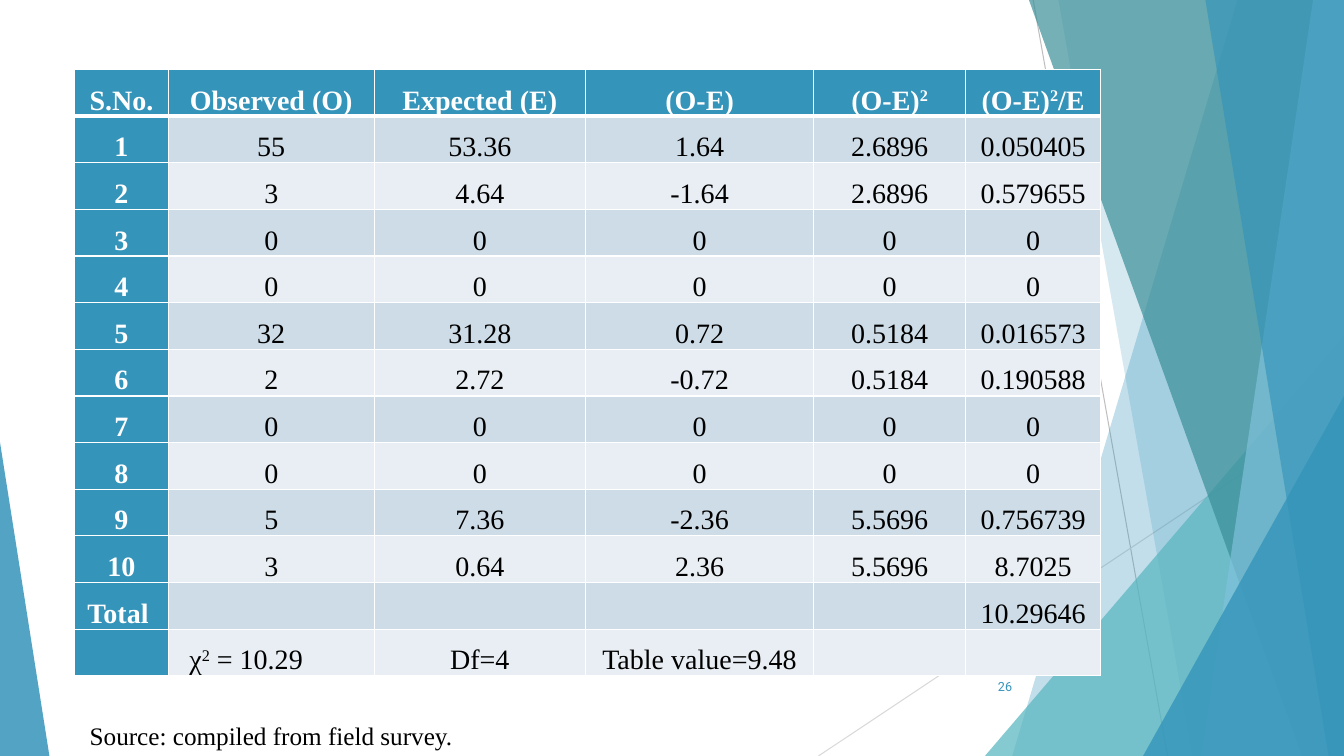
from lxml import etree
from pptx import Presentation
from pptx import util as u
from pptx.dml.color import RGBColor
from pptx.enum import shapes, text
from pptx.oxml.ns import qn

Pt = u.Pt
TEAL = "3494BA"
SERIF = "Times New Roman"


def rgb(color):
    return RGBColor.from_string(color)


def paint(shape, color, opacity):
    """Fill a shape with a translucent colour, without outline or shadow."""
    shape.shadow.inherit = False
    shape.line.fill.background()
    shape.fill.solid()
    shape.fill.fore_color.rgb = rgb(color)
    swatch = next(shape.element.spPr.iter(qn("a:srgbClr")))
    etree.SubElement(swatch, qn("a:alpha"), val=str(opacity * 1000))


deck = Presentation()
deck.slide_width, deck.slide_height = Pt(960), Pt(540)
slide = deck.slides.add_slide(deck.slide_layouts[6])

# Background: two hairlines
for x1, y1, x2, y2, color in [
    (738, 0, 834, 540, "BFBFBF"),
    (960, 290, 584.6, 540, "D9D9D9"),
]:
    hairline = slide.shapes.add_connector(
        shapes.MSO_CONNECTOR.STRAIGHT, Pt(x1), Pt(y1), Pt(x2), Pt(y2))
    hairline.line.color.rgb = rgb(color)
    hairline.line.width = Pt(0.75)
    etree.SubElement(hairline.element.spPr, qn("a:effectLst"))

# Background: facets, from back to front. A band runs to the right edge of the
# slide from (top x, bottom x); a triangle has (left, top, width, height, apex).
facets = [
    ((884, 723), TEAL, 30),
    ((756, 852), TEAL, 20),
    ((703.5, 240, 256.5, 300, 1), "58B6C0", 72),
    ((735, 929.5), "3A8F98", 70),
    ((938, 858), "7FC1DB", 70),
    ((861, 949), TEAL, 65),
    ((816.5, 283, 143.5, 257, 1), TEAL, 80),
    ((0, 316, 35.3, 224, 0), TEAL, 85),
]
for outline, color, opacity in facets:
    if len(outline) == 2:
        top_x, bottom_x = outline
        builder = slide.shapes.build_freeform(top_x, 0, scale=Pt(1))
        builder.add_line_segments([(960, 0), (960, 540), (bottom_x, 540)], close=True)
        facet = builder.convert_to_shape()
    else:
        *box, apex = outline
        facet = slide.shapes.add_shape(
            shapes.MSO_SHAPE.ISOSCELES_TRIANGLE, *[Pt(n) for n in box])
        facet.adjustments[0] = apex
    paint(facet, color, opacity)

# Chi-square table
results = [
    ["S.No.", "Observed (O)", "Expected (E)", "(O-E)", "(O-E)²", "(O-E)²/E"],
    ["1", "55", "53.36", "1.64", "2.6896", "0.050405"],
    ["2", "3", "4.64", "-1.64", "2.6896", "0.579655"],
    ["3", "0", "0", "0", "0", "0"],
    ["4", "0", "0", "0", "0", "0"],
    ["5", "32", "31.28", "0.72", "0.5184", "0.016573"],
    ["6", "2", "2.72", "-0.72", "0.5184", "0.190588"],
    ["7", "0", "0", "0", "0", "0"],
    ["8", "0", "0", "0", "0", "0"],
    ["9", "5", "7.36", "-2.36", "5.5696", "0.756739"],
    ["10", "3", "0.64", "2.36", "5.5696", "8.7025"],
    ["Total", "", "", "", "", "10.29646"],
    ["", "χ² = 10.29", "Df=4", "Table value=9.48", "", ""],
]
column_widths = [67, 147, 151, 163, 108.5, 96.5]
row_height = 27.4
right_margins = {(11, 0): 10, (12, 1): 41}

table = slide.shapes.add_table(
    len(results), len(column_widths), Pt(53.3), Pt(49.7),
    Pt(sum(column_widths)), Pt(row_height * len(results))).table
table.first_col = True
for column, width in zip(table.columns, column_widths):
    column.width = Pt(width)

for r, values in enumerate(results):
    table.rows[r].height = Pt(row_height)
    for c, value in enumerate(values):
        heading = r == 0 or c == 0
        cell = table.cell(r, c)
        cell.vertical_anchor = text.MSO_ANCHOR.BOTTOM
        cell.margin_left = Pt(5)
        cell.margin_right = Pt(right_margins.get((r, c), 5))
        cell.margin_top = cell.margin_bottom = 0
        cell.fill.solid()
        cell.fill.fore_color.rgb = rgb(
            TEAL if heading else "CEDCE7" if r % 2 else "E8EEF3")

        entry = cell.text_frame.paragraphs[0]
        entry.alignment = text.PP_ALIGN.CENTER
        entry.line_spacing = 1.5
        entry.font.name, entry.font.size = SERIF, Pt(20)
        entry.font.bold = heading
        entry.font.color.rgb = rgb("FFFFFF" if heading else "000000")
        base, square, rest = value.partition("²")
        if base:
            entry.add_run().text = base
        if square:
            exponent = entry.add_run()
            exponent.text = "2"
            exponent.font.element.set("baseline", "30000") if hasattr(
                exponent.font, "element") else exponent._r.get_or_add_rPr().set(
                "baseline", "30000")
        if rest:
            entry.add_run().text = rest

        properties = cell._tc.get_or_add_tcPr()
        for i, side in enumerate(["lnL", "lnR", "lnT", "lnB"]):
            thick = (r, side) in [(0, "lnB"), (1, "lnT")]
            border = etree.Element(qn("a:" + side), w=str(Pt(3 if thick else 1)))
            ink = etree.SubElement(border, qn("a:solidFill"))
            etree.SubElement(ink, qn("a:srgbClr"), val="FFFFFF")
            properties.insert(i, border)

# Source line and slide number
for caption, box, font, size, color, align, inset in [
    ("Source: compiled from field survey.", (53.3, 511.2, 280, 28.8),
     SERIF, 18, "000000", text.PP_ALIGN.LEFT, 10.8),
    ("26", (676, 476, 54, 28.8), "Roboto", 9, TEAL, text.PP_ALIGN.RIGHT, 7.2),
]:
    frame = slide.shapes.add_textbox(*[Pt(n) for n in box]).text_frame
    frame.word_wrap = True
    frame.vertical_anchor = text.MSO_ANCHOR.MIDDLE
    frame.margin_left = Pt(inset)
    line = frame.paragraphs[0]
    line.text = caption
    line.alignment = align
    line.font.name, line.font.size = font, Pt(size)
    line.font.color.rgb = rgb(color)

deck.save("out.pptx")
